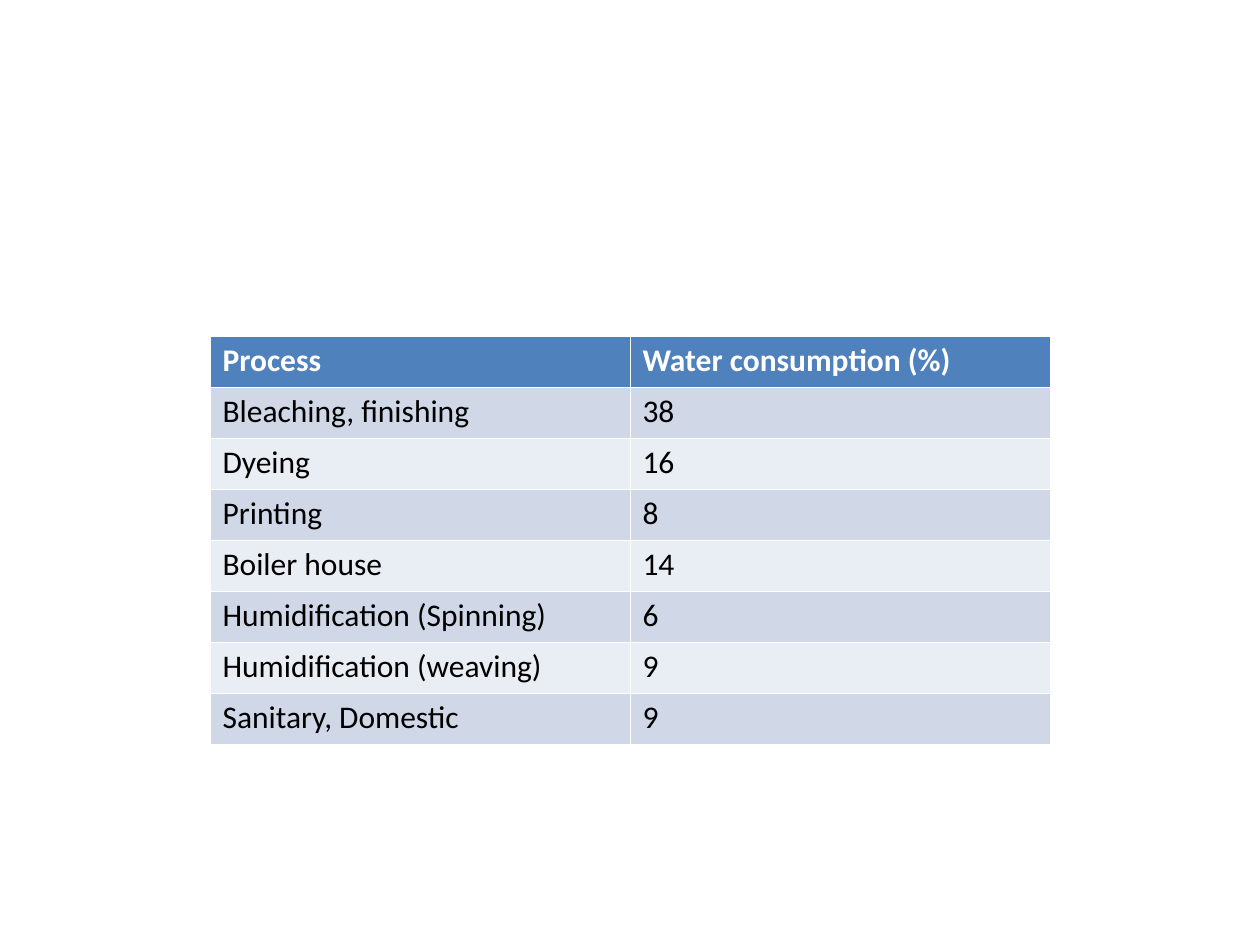
from lxml.etree import SubElement
from pptx import Presentation
from pptx.dml.color import RGBColor as Color
from pptx.oxml.ns import qn
from pptx.util import Inches, Pt

COLORS = {
    "header": "4F81BD",
    "odd": "D0D8E8",
    "even": "E9EDF4",
    "border": "FFFFFF",
    "header_text": "FFFFFF",
    "body_text": "000000",
}
FONT = "Calibri"
SLIDE_WIDTH, SLIDE_HEIGHT = Inches(10), Inches(7.5)
ROW_HEIGHT = Inches(0.405)

WATER_USE = [
    ("Process", "Water consumption (%)"),
    ("Bleaching, finishing", "38"),
    ("Dyeing", "16"),
    ("Printing", "8"),
    ("Boiler house", "14"),
    ("Humidification (Spinning)", "6"),
    ("Humidification (weaving)", "9"),
    ("Sanitary, Domestic", "9"),
]


def add_borders(cell):
    """Draw a thin line on all four sides of a cell."""
    properties = cell._tc.get_or_add_tcPr()
    for side in ("a:lnL", "a:lnR", "a:lnT", "a:lnB"):
        line = SubElement(properties, qn(side), w=str(Pt(0.25)))
        fill = SubElement(line, qn("a:solidFill"))
        SubElement(fill, qn("a:srgbClr"), val=COLORS["border"])


def style_cell(cell, text, fill, text_color, bold):
    # Borders come before the fill in the cell properties
    add_borders(cell)
    cell.fill.solid()
    cell.fill.fore_color.rgb = Color.from_string(COLORS[fill])

    cell.margin_left, cell.margin_top = Inches(0.1), Pt(7)
    cell.margin_right = cell.margin_bottom = 0

    para = cell.text_frame.paragraphs[0]
    para.text = text
    para.line_spacing = Pt(18)
    font = para.font
    font.name, font.size, font.bold = FONT, Pt(18), bold
    font.color.rgb = Color.from_string(COLORS[text_color])


def add_water_table(page, rows):
    """Place a table with a header row and alternating body rows."""
    frame = page.shapes.add_table(
        len(rows), len(rows[0]),
        SLIDE_WIDTH // 6, Inches(2.67),
        SLIDE_WIDTH * 2 // 3, ROW_HEIGHT * len(rows),
    )
    table = frame.table
    for row_index, values in enumerate(rows):
        table.rows[row_index].height = ROW_HEIGHT
        if row_index == 0:
            look = ("header", "header_text", True)
        else:
            look = ("odd" if row_index % 2 else "even", "body_text", False)
        for column_index, text in enumerate(values):
            style_cell(table.cell(row_index, column_index), text, *look)


def main():
    deck = Presentation()
    deck.slide_width, deck.slide_height = SLIDE_WIDTH, SLIDE_HEIGHT
    page = deck.slides.add_slide(deck.slide_layouts[6])

    # Water consumption by process
    add_water_table(page, WATER_USE)

    deck.save("out.pptx")


if __name__ == "__main__":
    main()
